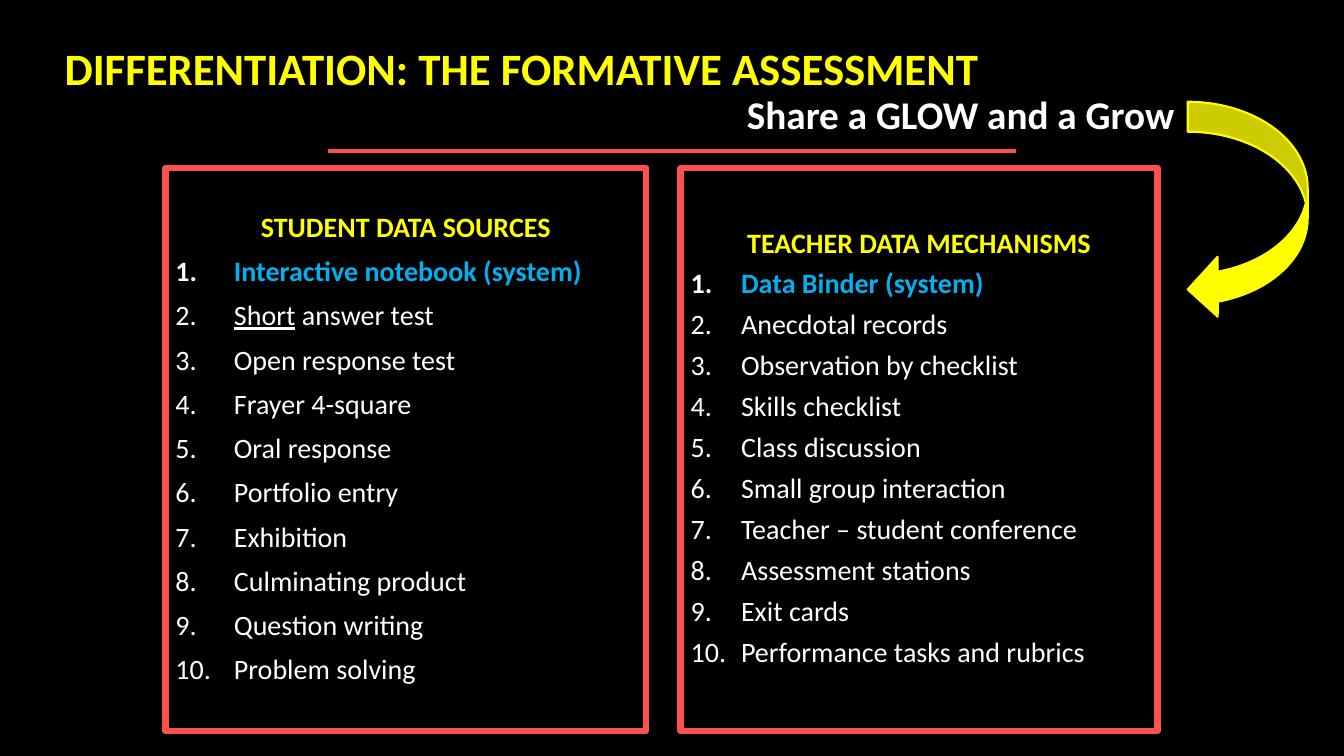
from lxml import etree
from pptx import Presentation
from pptx.dml.color import RGBColor
from pptx.enum.shapes import MSO_CONNECTOR, MSO_SHAPE
from pptx.enum.text import MSO_ANCHOR, MSO_AUTO_SIZE, PP_ALIGN
from pptx.oxml.ns import qn
from pptx.util import Inches, Pt

LEFT, CENTER = PP_ALIGN.LEFT, PP_ALIGN.CENTER
MIDDLE, TOP = MSO_ANCHOR.MIDDLE, MSO_ANCHOR.TOP
NO_FIT = MSO_AUTO_SIZE.NONE
STRAIGHT, ARROW = MSO_CONNECTOR.STRAIGHT, MSO_SHAPE.CURVED_LEFT_ARROW

# Content
TITLE = "DIFFERENTIATION: THE FORMATIVE ASSESSMENT"
SUBTITLE = "Share a GLOW and a Grow"
PANELS = [
    {"heading": "STUDENT DATA SOURCES", "left": 1.64, "width": 4.77,
     "indent": 0.58, "spacing": 0.9, "underlined": "Short",
     "items": ["Interactive notebook (system)", "Short answer test",
               "Open response test", "Frayer 4-square", "Oral response",
               "Portfolio entry", "Exhibition", "Culminating product",
               "Question writing", "Problem solving"]},
    {"heading": "TEACHER DATA MECHANISMS", "left": 6.75, "width": 4.73,
     "indent": 0.5, "spacing": 0.8, "underlined": "",
     "items": ["Data Binder (system)", "Anecdotal records",
               "Observation by checklist", "Skills checklist",
               "Class discussion", "Small group interaction",
               "Teacher – student conference", "Assessment stations",
               "Exit cards", "Performance tasks and rubrics"]},
]
COLORS = {"black": "000000", "yellow": "FFFF00", "red": "FF5050",
          "blue": "00B0F0", "white": "FFFFFF"}


def rgb(name):
    return RGBColor.from_string(COLORS[name])


def add_text(p, text, size=20, color="white", bold=False, underline=None):
    r = p.add_run()
    r.text = text
    f = r.font
    f.name, f.size, f.bold, f.underline = "Calibri", Pt(size), bold, underline
    f.color.rgb = rgb(color)


def place(sp, left, top, width, height, anchor=MIDDLE):
    sp.left, sp.top = Inches(left), Inches(top)
    sp.width, sp.height = Inches(width), Inches(height)
    tf = sp.text_frame
    tf.word_wrap, tf.auto_size, tf.vertical_anchor = True, NO_FIT, anchor
    return tf


def set_bullet(p, indent=0, numbered=False):
    pPr = p._p.get_or_add_pPr()
    pPr.set("marL", str(Inches(indent)))
    pPr.set("indent", str(-Inches(indent)))
    if numbered:
        clr = etree.SubElement(pPr, qn("a:buClr"))
        etree.SubElement(clr, qn("a:srgbClr"), val=COLORS["white"])
        etree.SubElement(pPr, qn("a:buFont"), typeface="+mj-lt")
        etree.SubElement(pPr, qn("a:buAutoNum"), type="arabicPeriod")
    else:
        etree.SubElement(pPr, qn("a:buNone"))


def set_line(line, color, width):
    line.color.rgb = rgb(color)
    line.width = Pt(width)


def fill_panel(sp, panel):
    tf = place(sp, panel["left"], 1.67, panel["width"], 5.58)
    set_line(sp.line, "red", 4.5)
    for i, text in enumerate([panel["heading"]] + panel["items"]):
        p = tf.paragraphs[0] if i == 0 else tf.add_paragraph()
        set_bullet(p, panel["indent"] if i else 0, numbered=i > 0)
        p.alignment = LEFT if i else CENTER
        p.line_spacing = panel["spacing"]
        p.space_before, p.space_after = Pt(0), Pt(10)
        mark = panel["underlined"]
        if i < 2:
            add_text(p, text, color="blue" if i else "yellow", bold=True)
        elif mark and text.startswith(mark):
            add_text(p, mark, underline=True)
            add_text(p, text[len(mark):])
        else:
            add_text(p, text)


prs = Presentation()
prs.slide_width, prs.slide_height = Inches(13.33), Inches(7.5)
s = prs.slides.add_slide(prs.slide_layouts[3])
s.background.fill.solid()
s.background.fill.fore_color.rgb = rgb("black")

# Title, raised above the middle of its box
tf = place(s.shapes.title, 0.54, 0.25, 10.94, 1.33)
tf.margin_bottom = Inches(0.53)
tf.paragraphs[0].alignment = LEFT
add_text(tf.paragraphs[0], TITLE, size=32, color="yellow", bold=True)

# Numbered panels
for sp, panel in zip(list(s.placeholders)[1:], PANELS):
    fill_panel(sp, panel)

# Rule under the heading
rule = s.shapes.add_connector(STRAIGHT, Inches(3.25), Inches(1.5),
                              Inches(10.08), Inches(1.5))
set_line(rule.line, "red", 3)
etree.SubElement(rule._element.spPr, qn("a:effectLst"))

# Subtitle
tf = place(s.shapes.add_textbox(0, 0, 0, 0), 7.31, 0.85, 5.06, 0.57, TOP)
add_text(tf.paragraphs[0], SUBTITLE, size=28, bold=True)

# Curved arrow
arrow = s.shapes.add_shape(ARROW, Inches(11.78), Inches(1.01),
                           Inches(1.19), Inches(2.16))
arrow.shadow.inherit = False
arrow.fill.solid()
arrow.fill.fore_color.rgb = rgb("yellow")
set_line(arrow.line, "yellow", 1.5)

prs.save("out.pptx")
